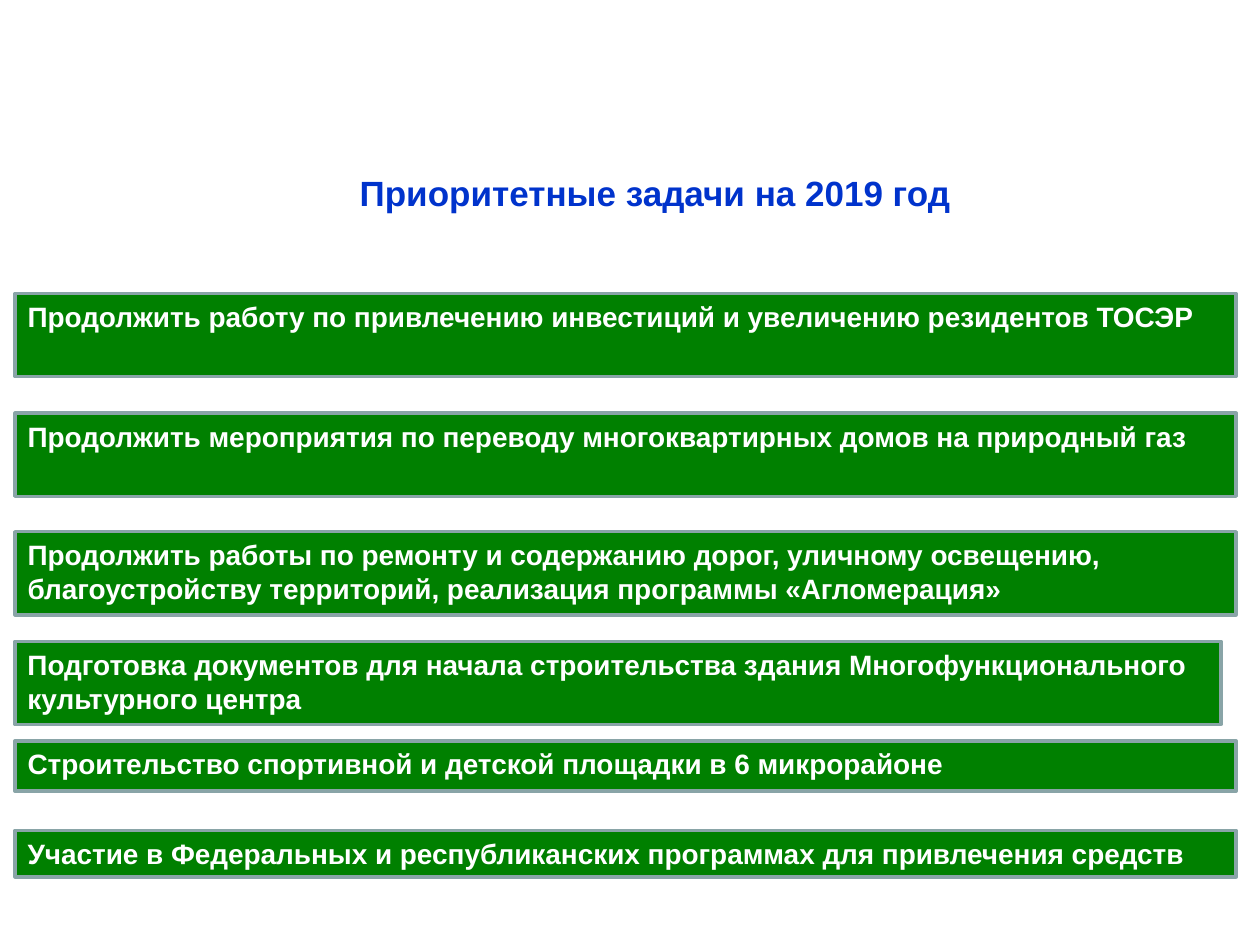
"""Build the slide of priority tasks for 2019."""
from dataclasses import dataclass

from pptx import Presentation
from pptx.dml.color import RGBColor
from pptx.enum.shapes import MSO_SHAPE
from pptx.enum.text import MSO_ANCHOR, PP_ALIGN
from pptx.util import Inches, Pt


@dataclass(frozen=True)
class Theme:
    """Hold the colours, font and type sizes."""
    font: str = "Arial"
    title: str = "0033CC"
    fill: str = "008000"
    edge: str = "89A4A7"
    text: str = "FFFFFF"
    head: int = 20
    body: int = 16
    line: int = 2


class Deck:
    """Draw styled elements on a grid of 100 columns by 75 rows."""

    def __init__(self, theme):
        """Open a blank slide."""
        self.theme = theme
        self.file = Presentation()
        self.file.slide_width = Inches(10)
        self.file.slide_height = Inches(7.5)
        self.slide = self.file.slides.add_slide(self.file.slide_layouts[6])

    def area(self, col, row, cols, rows):
        """Turn grid units into lengths."""
        wide, high = self.file.slide_width / 100, self.file.slide_height / 75
        return [round(n) for n in (col * wide, row * high, cols * wide, rows * high)]

    def label(self, shape, text, size, color, align):
        """Put one bold run into a shape."""
        frame = shape.text_frame
        frame.word_wrap = True
        frame.vertical_anchor = MSO_ANCHOR.TOP
        para = frame.paragraphs[0]
        para.alignment = align
        run = para.add_run()
        run.text = text
        run.font.name = self.theme.font
        run.font.size = Pt(size)
        run.font.bold = True
        run.font.color.rgb = RGBColor.from_string(color)

    def title(self, text, *grid):
        """Add the centred heading."""
        box = self.slide.shapes.add_textbox(*self.area(*grid))
        self.label(box, text, self.theme.head, self.theme.title, PP_ALIGN.CENTER)

    def task(self, text, *grid):
        """Add a framed task bar."""
        bar = self.slide.shapes.add_shape(MSO_SHAPE.RECTANGLE, *self.area(*grid))
        bar.shadow.inherit = False
        bar.fill.solid()
        bar.fill.fore_color.rgb = RGBColor.from_string(self.theme.fill)
        bar.line.color.rgb = RGBColor.from_string(self.theme.edge)
        bar.line.width = Pt(self.theme.line)
        self.label(bar, text, self.theme.body, self.theme.text, PP_ALIGN.LEFT)


LEFT, FULL, SHORT, TALL = 1.2, 96.9, 95.7, 6.6
TASKS = [
    ("Продолжить работу по привлечению инвестиций и увеличению резидентов ТОСЭР",
     23.3, FULL, TALL),
    ("Продолжить мероприятия по переводу многоквартирных домов на природный газ",
     32.8, FULL, TALL),
    ("Продолжить работы по ремонту и содержанию дорог, уличному освещению, "
     "благоустройству территорий, реализация программы «Агломерация»",
     42.2, FULL, TALL),
    ("Подготовка документов для начала строительства здания Многофункционального "
     "культурного центра", 50.9, SHORT, TALL),
    ("Строительство спортивной и детской площадки в 6 микрорайоне",
     58.8, FULL, 4),
    ("Участие в Федеральных и республиканских программах для привлечения средств",
     65.9, FULL, 3.7),
]


def main():
    """Build and save the slide."""
    deck = Deck(Theme())
    deck.title("Приоритетные задачи на 2019 год", 13.8, 13.1, 76.4, 4.3)
    for text, row, cols, rows in TASKS:
        deck.task(text, LEFT, row, cols, rows)
    deck.file.save("out.pptx")


if __name__ == "__main__":
    main()
